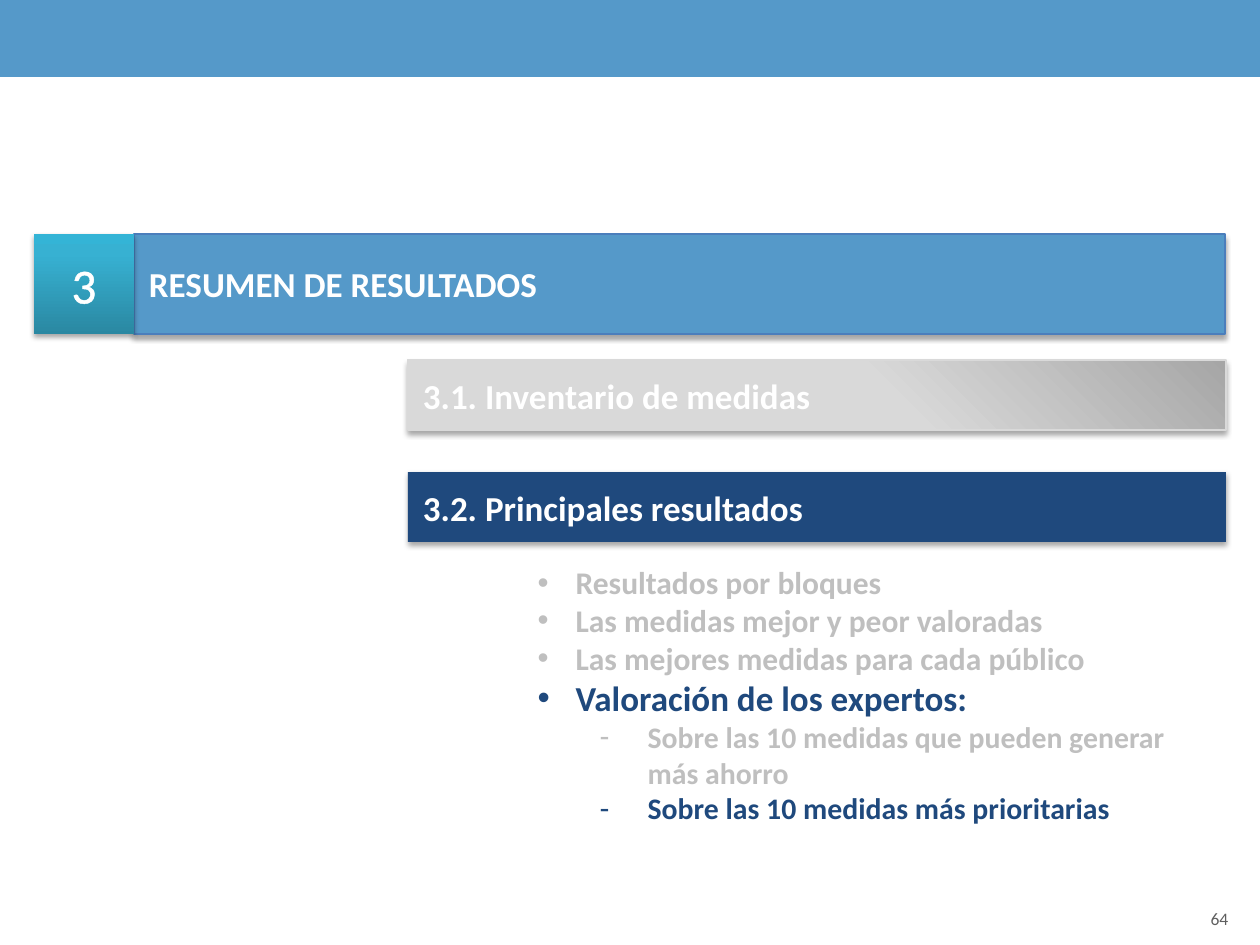
import pptx
import pptx.dml.color
import pptx.enum.shapes
import pptx.enum.text
import pptx.oxml
import pptx.oxml.ns
import pptx.util
from lxml import etree

RGB = pptx.dml.color.RGBColor
ALIGN = pptx.enum.text.PP_ALIGN
MIDDLE = pptx.enum.text.MSO_ANCHOR.MIDDLE
qn = pptx.oxml.ns.qn

FONT = "Calibri"
WHITE = RGB(0xFF, 0xFF, 0xFF)
BLUE = RGB(0x55, 0x99, 0xC9)
EDGE_BLUE = RGB(0x4B, 0x7E, 0xBC)
NAVY = RGB(0x1F, 0x49, 0x7D)
MUTED = RGB(0xBF, 0xBF, 0xBF)
SILVER = RGB(0xD9, 0xD9, 0xD9)
GRAY = RGB(0xA6, 0xA6, 0xA6)
PAGE_GRAY = RGB(0x5F, 0x5F, 0x5F)
TEAL_STOPS = [(0, RGB(0x2A, 0x88, 0xA2)), (80, RGB(0x37, 0xB1, 0xD2)),
              (100, RGB(0x34, 0xB4, 0xD6))]
SILVER_STOPS = [(0, GRAY), (42, SILVER), (100, SILVER)]

PX_PER_INCH = 126
BULLET_INDENTS = [("•", 161, -38), ("-", 233, -48)]  # by level


def px(length):
    return round(length * 914400 / PX_PER_INCH)


def place(shape, box):
    shape.left, shape.top, shape.width, shape.height = map(px, box)


def write(paragraph, text, size, color, bold=False, align=ALIGN.LEFT,
          outline=None, level=None):
    paragraph.alignment = align
    paragraph.space_before = pptx.util.Pt(0)
    if level is not None:
        mark, margin, indent = BULLET_INDENTS[level]
        paragraph.level = level
        properties = paragraph._p.get_or_add_pPr()
        properties.set("marL", str(px(margin)))
        properties.set("indent", str(px(indent)))
        etree.SubElement(properties, qn("a:buFont"), typeface="Arial")
        etree.SubElement(properties, qn("a:buChar"), char=mark)
    run = paragraph.add_run()
    run.text = text
    run.font.name = FONT
    run.font.size = pptx.util.Pt(size)
    run.font.bold = bold
    run.font.color.rgb = color
    if outline is not None:
        run._r.get_or_add_rPr().insert(0, pptx.oxml.parse_xml(
            f'<a:ln {pptx.oxml.ns.nsdecls("a")} w="9525"><a:solidFill>'
            f'<a:srgbClr val="{outline}"/></a:solidFill></a:ln>'))


def add_rectangle(slide, box):
    return slide.shapes.add_shape(
        pptx.enum.shapes.MSO_SHAPE.RECTANGLE, *map(px, box))


def paint(shape, fill=None, stops=None, angle=0, line=None, shadow=True):
    if stops:
        shape.fill.gradient()
        shape.fill.gradient_angle = angle
        stop_list = shape._element.spPr.find(".//" + qn("a:gsLst"))
        stop_list.clear()
        for position, color in stops:
            stop = etree.SubElement(stop_list, qn("a:gs"), pos=str(position * 1000))
            etree.SubElement(stop, qn("a:srgbClr"), val=str(color))
    else:
        shape.fill.solid()
        shape.fill.fore_color.rgb = fill
    if line is None:
        shape.line.fill.background()
    else:
        shape.line.color.rgb = line
        shape.line.width = pptx.util.Pt(0.75)
    shape.shadow.inherit = False
    if shadow:
        shape._element.spPr.find(qn("a:effectLst")).append(pptx.oxml.parse_xml(
            f'<a:outerShdw {pptx.oxml.ns.nsdecls("a")} blurRad="39370" dist="22860" '
            'dir="5400000" rotWithShape="0"><a:srgbClr val="000000">'
            '<a:alpha val="35000"/></a:srgbClr></a:outerShdw>'))


def label(shape, text, **text_format):
    frame = shape.text_frame
    frame.word_wrap = True
    frame.auto_size = pptx.enum.text.MSO_AUTO_SIZE.NONE
    frame.vertical_anchor = MIDDLE
    frame.margin_left = frame.margin_right = px(15)
    frame.margin_top = frame.margin_bottom = px(15)
    write(frame.paragraphs[0], text, **text_format)


def build_section_header(slide, box, number, heading):
    left, top, width, height = box
    title = slide.shapes.title
    place(title, (left + height, top, width - height, height))
    paint(title, fill=BLUE, line=EDGE_BLUE)
    label(title, heading, size=20, color=WHITE, bold=True)

    # Square number tile at the left end
    tile = add_rectangle(slide, (left, top, height, height))
    paint(tile, stops=TEAL_STOPS, angle=90)
    label(tile, number, size=28, color=WHITE, align=ALIGN.CENTER, outline=WHITE)


def build_subsections(slide, box, pitch, subsections):
    left, top, width, height = box
    for row, (heading, look) in enumerate(subsections):
        bar = add_rectangle(slide, (left, top + row * pitch, width, height))
        paint(bar, **look)
        label(bar, heading, size=20, color=WHITE, bold=True)


def build_topics(slide, box, topics):
    body = slide.placeholders[1]
    place(body, box)
    frame = body.text_frame
    frame.word_wrap = True
    frame.auto_size = pptx.enum.text.MSO_AUTO_SIZE.NONE
    for index, (text, level, size, color) in enumerate(topics):
        paragraph = frame.add_paragraph() if index else frame.paragraphs[0]
        write(paragraph, text, size, color, bold=True, level=level)


def build_page_number(slide, box, number):
    page = slide.shapes.add_textbox(*map(px, box))
    page.text_frame.word_wrap = True
    page.text_frame.vertical_anchor = MIDDLE
    write(page.text_frame.paragraphs[0], number, 10, PAGE_GRAY, align=ALIGN.CENTER)


def main():
    deck = pptx.Presentation()
    deck.slide_width, deck.slide_height = px(1260), px(945)
    slide = deck.slides.add_slide(deck.slide_layouts[1])

    # Top band
    paint(add_rectangle(slide, (0, 0, 1260, 77)), fill=BLUE, shadow=False)

    build_section_header(slide, (34, 234, 1191, 100), "3", "RESUMEN DE RESULTADOS")
    build_subsections(slide, (408, 360, 818, 70), 112, [
        ("3.1. Inventario de medidas",
         {"stops": SILVER_STOPS, "angle": 225, "line": SILVER}),
        ("3.2. Principales resultados", {"fill": NAVY}),
    ])
    build_topics(slide, (402, 557, 820, 277), [
        ("Resultados por bloques", 0, 18, MUTED),
        ("Las medidas mejor y peor valoradas", 0, 18, MUTED),
        ("Las mejores medidas para cada público", 0, 18, MUTED),
        ("Valoración de los expertos:", 0, 20, NAVY),
        ("Sobre las 10 medidas que pueden generar más ahorro", 1, 17, MUTED),
        ("Sobre las 10 medidas más prioritarias", 1, 17, NAVY),
    ])
    build_page_number(slide, (1188, 897, 63, 42), "64")

    deck.save("out.pptx")


if __name__ == "__main__":
    main()
